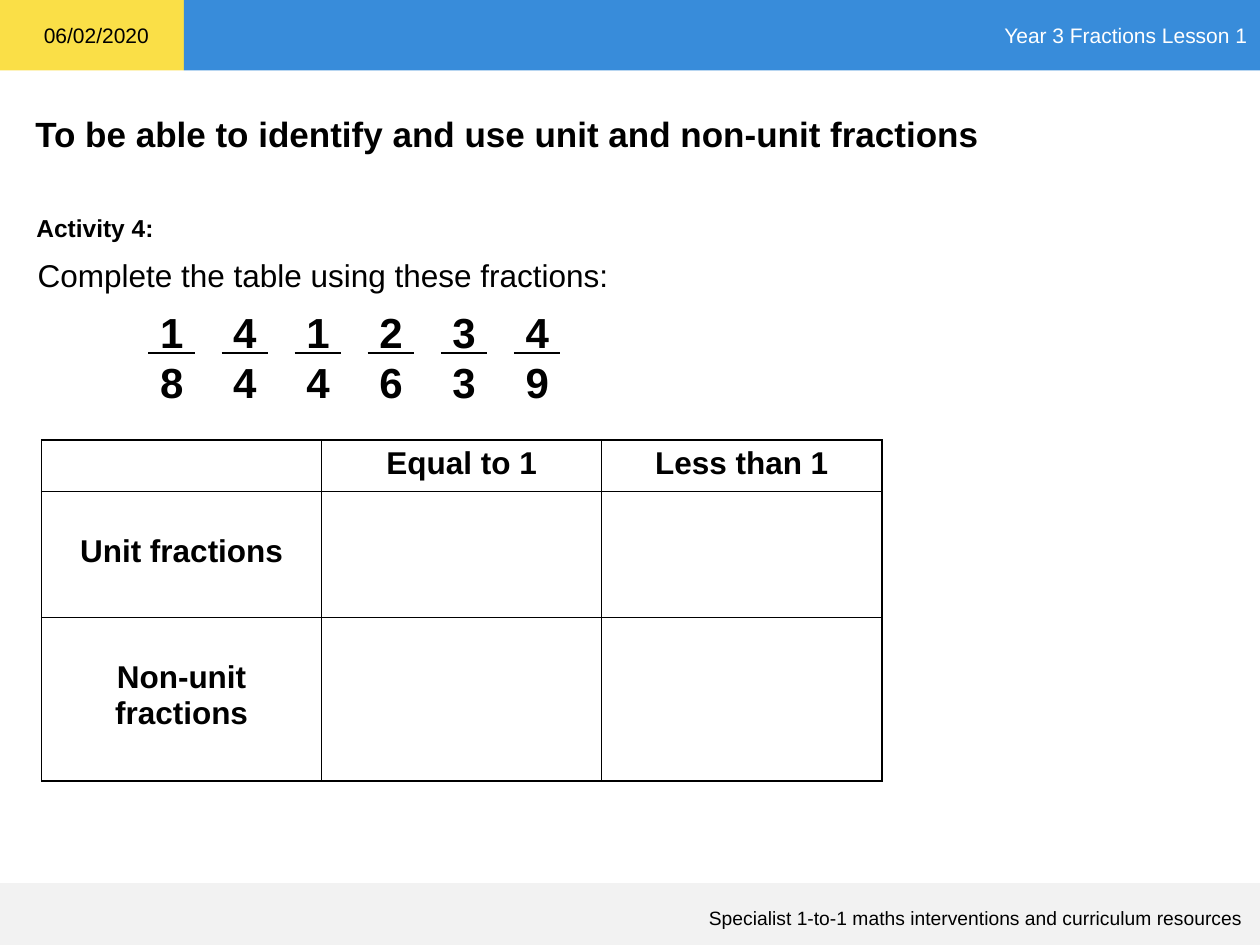
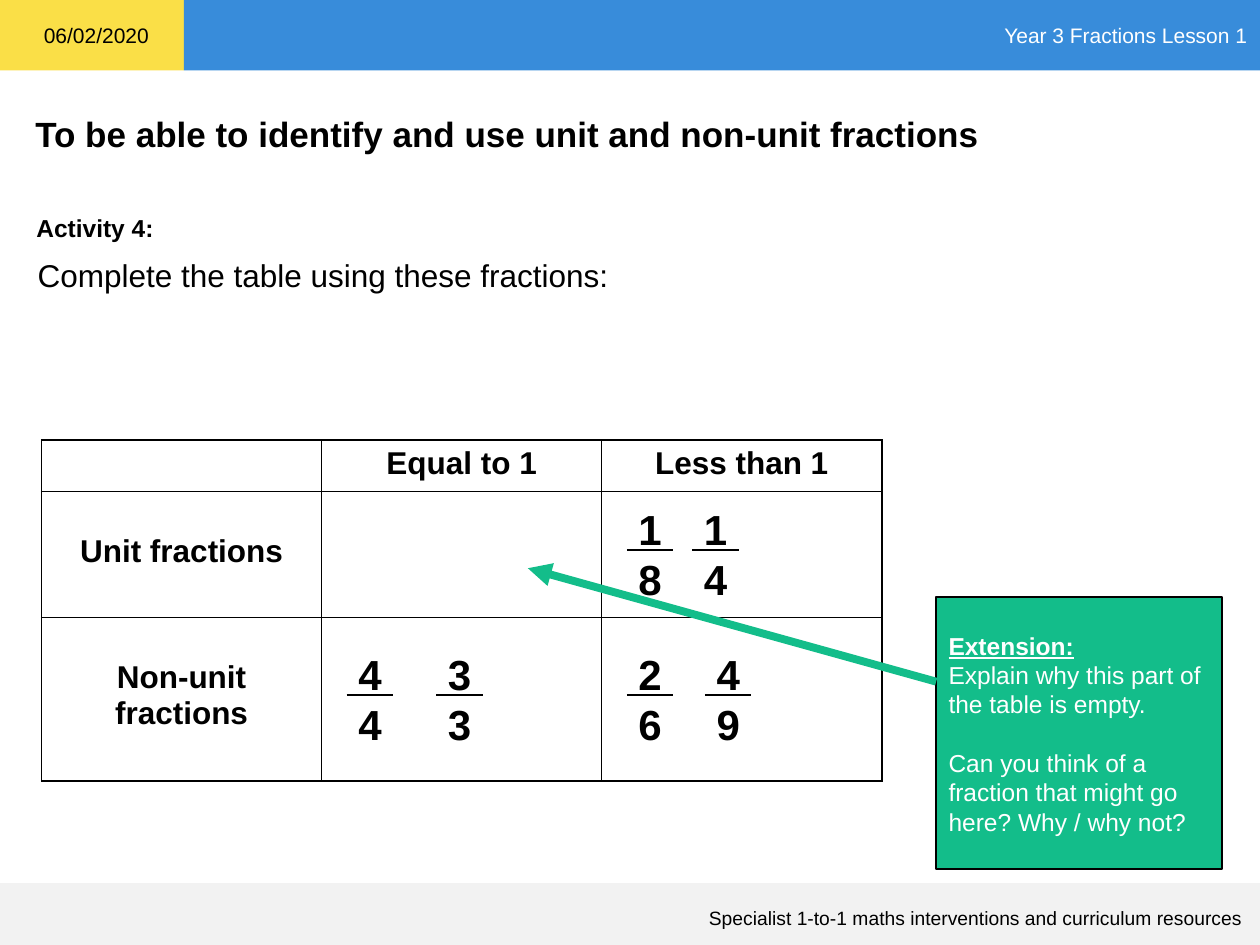
import typing

import lxml.etree
import pptx
import pptx.dml.color
import pptx.enum.shapes
import pptx.enum.text
import pptx.oxml
import pptx.oxml.ns
import pptx.util

RGBColor = pptx.dml.color.RGBColor
Align = pptx.enum.text.PP_ALIGN
Anchor = pptx.enum.text.MSO_ANCHOR

YELLOW = RGBColor(0xFA, 0xDF, 0x47)
BLUE = RGBColor(0x38, 0x8C, 0xDA)
GREY = RGBColor(0xF2, 0xF2, 0xF2)
GREEN = RGBColor(0x13, 0xBD, 0x8A)
BLACK = RGBColor(0, 0, 0)
WHITE = RGBColor(255, 255, 255)

FONT = "Arial"
COLUMNS, ROWS = 100, 75
CELL = pptx.util.Inches(0.1)

FRACTION_WIDTH, FRACTION_HEIGHT = 5.8, 9.1
FRACTIONS = [(1, 8), (4, 4), (1, 4), (2, 6), (3, 3), (4, 9)]
TABLE_COLUMN = 22.23
TABLE_ROWS = [4.1, 10, 13]
TABLE_TEXT = [
    ["", "Equal to 1", "Less than 1"],
    ["Unit fractions", "", ""],
    ["Non-unit fractions", "", ""],
]


class Box(typing.NamedTuple):
    """A rectangle measured in grid columns and rows."""

    left: float
    top: float
    width: float
    height: float

    def inner(self, left, top, width, height):
        """Return a box offset from the corner of this one."""
        return Box(self.left + left, self.top + top, width, height)

    def lengths(self):
        """Return the four lengths in slide units."""
        return [grid(value) for value in self]


SLIDE_BOX = Box(0, 0, COLUMNS, ROWS)
HEADER_BOX = SLIDE_BOX.inner(0, 0, COLUMNS, 5.6)
FOOTER_BOX = SLIDE_BOX.inner(0, 70.1, COLUMNS, 4.9)
TITLE_BOX = SLIDE_BOX.inner(1.8, 8.4, 97.7, 4.4)
TASK_BOX = SLIDE_BOX.inner(1.9, 16.4, 71.8, 7.4)
FRACTION_ROW_BOX = SLIDE_BOX.inner(10.8, 23.8, 35, FRACTION_HEIGHT)
TABLE_BOX = SLIDE_BOX.inner(3.3, 34.9, 3 * TABLE_COLUMN, sum(TABLE_ROWS))
EXTENSION_BOX = SLIDE_BOX.inner(74.3, 47.4, 22.7, 21.6)


def grid(count):
    """Convert a number of grid cells to slide units."""
    return round(count * CELL)


def add_run(paragraph, text, size, color=BLACK, bold=False, underline=False):
    """Add one formatted run to a paragraph."""
    run = paragraph.add_run()
    run.text = text
    run.font.name = FONT
    run.font.size = pptx.util.Pt(size)
    run.font.color.rgb = color
    run.font.bold = bold
    run.font.underline = underline


def add_text(slide, box, text, size, bold=False, align=Align.LEFT):
    """Add a text box holding one run."""
    frame = slide.shapes.add_textbox(*box.lengths()).text_frame
    frame.word_wrap = True
    paragraph = frame.paragraphs[0]
    paragraph.alignment = align
    add_run(paragraph, text, size, bold=bold)


def add_rectangle(slide, box, fill, line=None):
    """Add a flat rectangle, outlined when a line colour is given."""
    shape = slide.shapes.add_shape(
        pptx.enum.shapes.MSO_SHAPE.RECTANGLE, *box.lengths())
    shape.shadow.inherit = False
    shape.fill.solid()
    shape.fill.fore_color.rgb = fill
    if line is None:
        shape.line.fill.background()
    else:
        shape.line.color.rgb = line
        shape.line.width = pptx.util.Pt(1)
    shape.text_frame.vertical_anchor = Anchor.MIDDLE
    return shape


def add_header(slide, box):
    """Add the date block and the lesson band."""
    date_width = 14.6
    add_rectangle(slide, box.inner(0, 0, date_width, box.height), YELLOW)
    band = add_rectangle(
        slide, box.inner(date_width, 0, box.width - date_width, box.height), BLUE)
    paragraph = band.text_frame.paragraphs[0]
    paragraph.alignment = Align.RIGHT
    add_run(paragraph, "Year 3 Fractions Lesson 1", 12, WHITE)
    add_text(slide, box.inner(2.5, 1.3, 11, 3), "06/02/2020", 12)


def add_footer(slide, box):
    """Add the grey footer band and its line of text."""
    add_rectangle(slide, box, GREY)
    add_text(slide, box.inner(4.2, 1.3, 95.4, 2.9),
             "Specialist 1-to-1 maths interventions and curriculum resources",
             11, align=Align.RIGHT)


def set_title(slide, box):
    """Place and format the title placeholder."""
    title = slide.shapes.title
    title.left, title.top, title.width, title.height = box.lengths()
    frame = title.text_frame
    frame.vertical_anchor = Anchor.TOP
    frame.word_wrap = True
    frame.auto_size = pptx.enum.text.MSO_AUTO_SIZE.NONE
    frame.paragraphs[0].alignment = Align.LEFT
    add_run(frame.paragraphs[0],
            "To be able to identify and use unit and non-unit fractions",
            20, bold=True)


def add_task(slide, box):
    """Add the activity label and its instruction."""
    add_text(slide, box.inner(0, 0, 12, 3.4), "Activity 4:", 14, bold=True)
    add_text(slide, box.inner(0.1, 3.4, box.width, 4),
             "Complete the table using these fractions:", 18)


def set_borders(cell):
    """Draw a thin black line on each side of a table cell."""
    properties = cell._tc.get_or_add_tcPr()
    for side in ("lnL", "lnR", "lnT", "lnB"):
        properties.append(pptx.oxml.parse_xml(
            f'<a:{side} {pptx.oxml.ns.nsdecls("a")} w="12700"><a:solidFill>'
            f'<a:srgbClr val="{BLACK}"/></a:solidFill></a:{side}>'))


def add_fraction_table(slide, box):
    """Add the table that sorts fractions by kind and size."""
    table = slide.shapes.add_table(
        len(TABLE_ROWS), len(TABLE_TEXT[0]), *box.lengths()).table
    table.first_row = table.horz_banding = False
    for column in table.columns:
        column.width = grid(TABLE_COLUMN)
    for row_index, height in enumerate(TABLE_ROWS):
        table.rows[row_index].height = grid(height)
        for column_index, text in enumerate(TABLE_TEXT[row_index]):
            cell = table.cell(row_index, column_index)
            set_borders(cell)
            cell.fill.solid()
            cell.fill.fore_color.rgb = WHITE
            if text:
                cell.margin_top = grid(3.4 if row_index else 0.5)
                paragraph = cell.text_frame.paragraphs[0]
                paragraph.alignment = Align.CENTER
                add_run(paragraph, text, 18, bold=True)


def add_fractions(slide, box, fractions, step=FRACTION_WIDTH):
    """Add a row of fractions, each with its numerator underlined."""
    for index, (numerator, denominator) in enumerate(fractions):
        place = box.inner(index * step, 0, FRACTION_WIDTH, FRACTION_HEIGHT)
        frame = slide.shapes.add_textbox(*place.lengths()).text_frame
        frame.word_wrap = True
        add_run(frame.paragraphs[0], f" {numerator} ", 24, bold=True, underline=True)
        add_run(frame.add_paragraph(), f" {denominator}", 24, bold=True)


def add_answers(slide, box):
    """Place the sorted fractions in the cells of the table."""
    answers = [
        (1, 2, 5.2, [(1, 8), (1, 4)]),
        (2, 1, 7.1, [(4, 4), (3, 3)]),
        (2, 2, 6.2, [(2, 6), (4, 9)]),
    ]
    for row, column, step, fractions in answers:
        inset = (TABLE_ROWS[row] - FRACTION_HEIGHT) / 2
        cell_box = box.inner(column * TABLE_COLUMN + 1, sum(TABLE_ROWS[:row]) + inset,
                             TABLE_COLUMN, FRACTION_HEIGHT)
        add_fractions(slide, cell_box, fractions, step)


def add_extension(slide, box):
    """Add the extension box and its arrow to the empty cell."""
    frame = add_rectangle(slide, box, GREEN, BLACK).text_frame
    frame.word_wrap = True
    add_run(frame.paragraphs[0], "Extension:", 14, WHITE, bold=True, underline=True)
    add_run(frame.add_paragraph(), "Explain why this part of the table is empty.",
            14, WHITE)
    question = frame.add_paragraph()
    question.space_before = pptx.util.Pt(16.5)
    add_run(question, "Can you think of a fraction that might go here? Why / why not?",
            14, WHITE)
    for paragraph in frame.paragraphs:
        paragraph.alignment = Align.LEFT

    start = box.inner(0, 6.7, 0, 0)
    end = box.inner(-32.4, -2.3, 0, 0)
    arrow = slide.shapes.add_connector(
        pptx.enum.shapes.MSO_CONNECTOR.STRAIGHT,
        *start.lengths()[:2], *end.lengths()[:2])
    arrow.line.color.rgb = GREEN
    arrow.line.width = pptx.util.Pt(4.5)
    lxml.etree.SubElement(arrow.line._get_or_add_ln(),
                          pptx.oxml.ns.qn("a:tailEnd"), type="triangle")
    lxml.etree.SubElement(arrow._element.spPr, pptx.oxml.ns.qn("a:effectLst"))


def add_activity_slide(presentation):
    """Add a slide with the regions that both slides share."""
    slide = presentation.slides.add_slide(presentation.slide_layouts[5])
    add_header(slide, HEADER_BOX)
    add_footer(slide, FOOTER_BOX)
    set_title(slide, TITLE_BOX)
    add_task(slide, TASK_BOX)
    add_fraction_table(slide, TABLE_BOX)
    return slide


def main():
    """Build the question slide and the answer slide."""
    presentation = pptx.Presentation()
    presentation.slide_width = grid(COLUMNS)
    presentation.slide_height = grid(ROWS)
    question_slide = add_activity_slide(presentation)
    add_fractions(question_slide, FRACTION_ROW_BOX, FRACTIONS)
    answer_slide = add_activity_slide(presentation)
    add_answers(answer_slide, TABLE_BOX)
    add_extension(answer_slide, EXTENSION_BOX)
    presentation.save("out.pptx")


if __name__ == "__main__":
    main()
